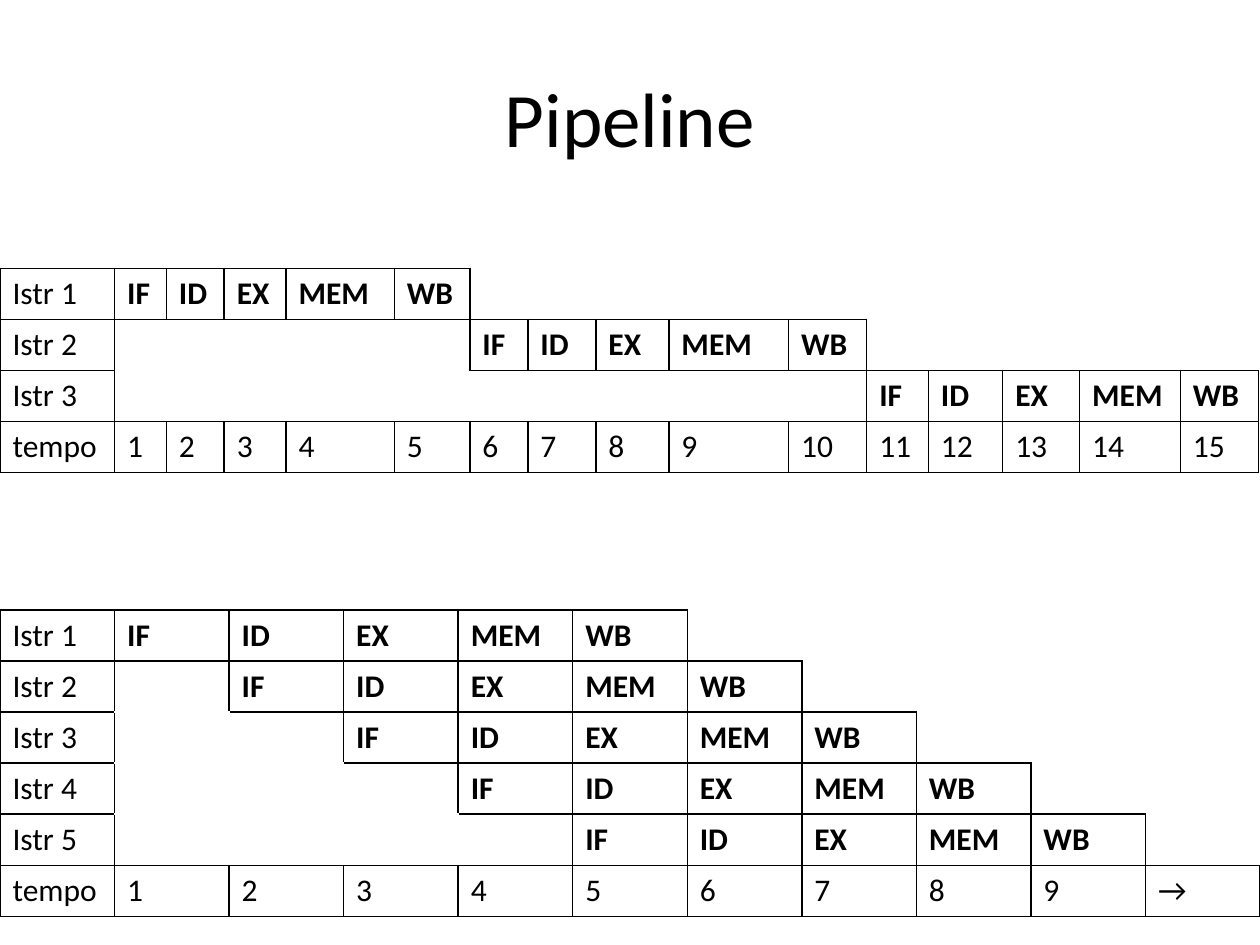
from lxml import etree
from pptx import Presentation
from pptx.dml.color import RGBColor
from pptx.enum.text import MSO_ANCHOR, PP_ALIGN
from pptx.oxml.ns import qn
from pptx.util import Inches, Pt

CENTER = PP_ALIGN.CENTER
MIDDLE = MSO_ANCHOR.MIDDLE
FONT = "Calibri"
BLACK = "000000"
WHITE = "FFFFFF"
ROW_HEIGHT = 0.405
STAGES = ["IF", "ID", "EX", "MEM", "WB"]
SEQUENTIAL_WIDTHS = [0.91, 0.41, 0.46, 0.49, 0.86, 0.6, 0.46, 0.54, 0.58,
                     0.95, 0.62, 0.49, 0.59, 0.61, 0.8, 0.62]
PIPELINED_WIDTHS = [10 / 11] * 11
# Neighbouring cell (row step, column step) across each border
BORDERS = {"a:lnL": (0, -1), "a:lnR": (0, 1), "a:lnT": (-1, 0), "a:lnB": (1, 0)}


def color(hex_value):
    return RGBColor.from_string(hex_value)


def add_run(paragraph, text, size, bold=False):
    run = paragraph.add_run()
    run.text = text
    run.font.name = FONT
    run.font.size = Pt(size)
    run.font.bold = bold
    run.font.color.rgb = color(BLACK)


def set_border(cell, tag, hex_value):
    """Draw one cell edge, or leave it undrawn when hex_value is None."""
    properties = cell._tc.get_or_add_tcPr()
    line = etree.SubElement(properties, qn(tag), w=str(Pt(1)))
    if hex_value is None:
        etree.SubElement(line, qn("a:noFill"))
    else:
        fill = etree.SubElement(line, qn("a:solidFill"))
        etree.SubElement(fill, qn("a:srgbClr"), val=hex_value)


def schedule(instruction_count, delay, times):
    """Return rows in which each instruction starts delay cycles after the last."""
    rows = []
    for index in range(instruction_count):
        before = [""] * (index * delay)
        after = [""] * (len(times) - len(before) - len(STAGES))
        rows.append([f"Istr {index + 1}"] + before + STAGES + after)
    return rows + [["tempo"] + times]


def add_title(slide, text, left, top, width, height):
    title = slide.shapes.title
    title.left, title.top = Inches(left), Inches(top)
    title.width, title.height = Inches(width), Inches(height)
    title.text_frame.vertical_anchor = MIDDLE
    paragraph = title.text_frame.paragraphs[0]
    paragraph.alignment = CENTER
    add_run(paragraph, text, 44)


def add_timeline(slide, rows, left, top, widths, idle_border):
    """Add a timing table whose used cells are outlined in black."""
    frame = slide.shapes.add_table(
        len(rows), len(widths), Inches(left), Inches(top),
        Inches(sum(widths)), Inches(ROW_HEIGHT * len(rows)))
    table = frame.table
    table.first_row = table.horz_banding = False
    for column, width in zip(table.columns, widths):
        column.width = Inches(width)
    for table_row in table.rows:
        table_row.height = Inches(ROW_HEIGHT)

    used = {(r, c) for r, row in enumerate(rows)
            for c, text in enumerate(row) if text}
    for r, row in enumerate(rows):
        for c, text in enumerate(row):
            cell = table.cell(r, c)
            for tag, (down, right) in BORDERS.items():
                outlined = (r, c) in used or (r + down, c + right) in used
                set_border(cell, tag, BLACK if outlined else idle_border)
            cell.fill.solid()
            cell.fill.fore_color.rgb = color(WHITE)
            if text:
                add_run(cell.text_frame.paragraphs[0], text, 18, text in STAGES)


def main():
    presentation = Presentation()
    presentation.slide_width = Inches(10)
    presentation.slide_height = Inches(7.5)
    slide = presentation.slides.add_slide(presentation.slide_layouts[5])
    add_title(slide, "Pipeline", 0.5, 0.3, 9, 1.25)

    sequential_times = [str(cycle) for cycle in range(1, 16)]
    add_timeline(slide, schedule(3, len(STAGES), sequential_times),
                 0, 2.13, SEQUENTIAL_WIDTHS, None)

    pipelined_times = [str(cycle) for cycle in range(1, 10)] + ["→"]
    add_timeline(slide, schedule(5, 1, pipelined_times),
                 0, 4.84, PIPELINED_WIDTHS, WHITE)
    presentation.save("out.pptx")


if __name__ == "__main__":
    main()
